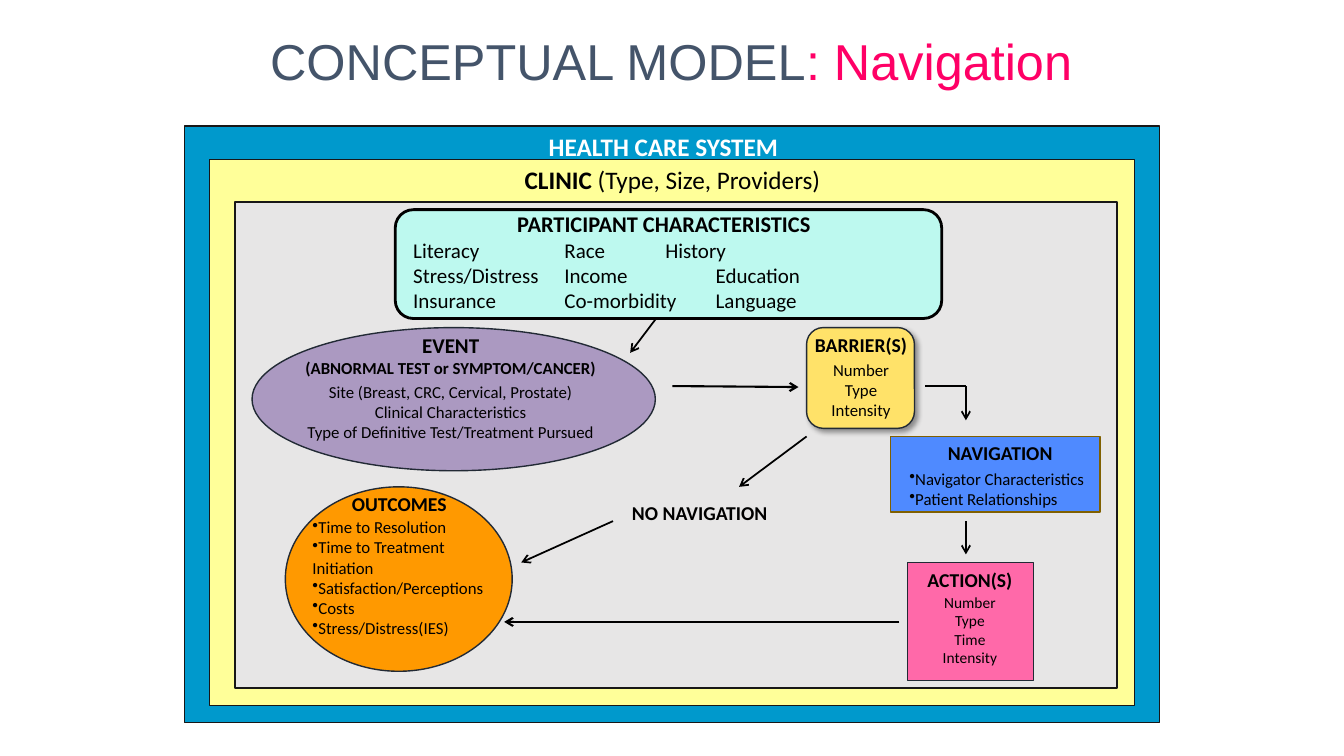
from dataclasses import dataclass

from lxml import etree
from pptx import Presentation
from pptx.dml.color import RGBColor
from pptx.enum.shapes import MSO_CONNECTOR as Connector, MSO_SHAPE as Shape
from pptx.enum.text import MSO_AUTO_SIZE as AutoSize, PP_ALIGN as Align
from pptx.oxml.ns import qn
from pptx.util import Inches, Pt

BLACK, WHITE, OUTLINE = "000000", "FFFFFF", "222A35"


@dataclass
class Line:
    """One paragraph: runs of (text, bold, colour) and their layout."""
    runs: list
    size: float
    align: Align = Align.CENTER
    gap: float = 0
    bullet: bool = False
    tabs: tuple = ()
    font: str = "Calibri"


def color(value):
    """Turn a hex string into a colour."""
    return RGBColor.from_string(value)


def bold(text, size, tint=BLACK, align=Align.CENTER):
    """Return a bold line."""
    return Line([(text, True, tint)], size, align)


def plain(texts, size, gap=0, **layout):
    """Return regular lines, with a gap above the first."""
    return [Line([(text, False, BLACK)], size, gap=0 if index else gap, **layout)
            for index, text in enumerate(texts)]


def add_panel(slide, kind, box, fill, line=OUTLINE, width=1):
    """Add a filled, outlined preset shape."""
    shape = slide.shapes.add_shape(kind, *map(Inches, box))
    shape.shadow.inherit = False
    shape.fill.solid()
    shape.fill.fore_color.rgb = color(fill)
    shape.line.color.rgb = color(line)
    shape.line.width = Pt(width)
    return shape


def add_drop_shadow(shape):
    """Give a shape a soft shadow to the lower right."""
    effects = shape._element.spPr.find(qn("a:effectLst"))
    shadow = etree.SubElement(effects, qn("a:outerShdw"), blurRad=str(Pt(4)),
                              dist=str(Pt(3)), dir="2700000", algn="tl", rotWithShape="0")
    tint = etree.SubElement(shadow, qn("a:srgbClr"), val=BLACK)
    etree.SubElement(tint, qn("a:alpha"), val="40000")


def format_line(paragraph, line):
    """Fill a paragraph from a line."""
    properties = paragraph._p.get_or_add_pPr()
    if line.bullet:
        properties.set("marL", "0")
        properties.set("indent", "0")
        etree.SubElement(properties, qn("a:buChar"), char="•")
    if line.tabs:
        stops = etree.SubElement(properties, qn("a:tabLst"))
        for stop in line.tabs:
            etree.SubElement(stops, qn("a:tab"), pos=str(Inches(stop)), algn="l")
    paragraph.alignment = line.align
    if line.gap:
        paragraph.space_before = Pt(line.gap)
    for text, is_bold, tint in line.runs:
        run = paragraph.add_run()
        run.text = text
        run.font.name = line.font
        run.font.size = Pt(line.size)
        run.font.bold = is_bold
        run.font.color.rgb = color(tint)


def add_text(slide, box, lines):
    """Add a wrapping text box."""
    text_frame = slide.shapes.add_textbox(*map(Inches, box)).text_frame
    text_frame.word_wrap = True
    text_frame.auto_size = AutoSize.SHAPE_TO_FIT_TEXT
    for index, line in enumerate(lines):
        paragraph = text_frame.add_paragraph() if index else text_frame.paragraphs[0]
        format_line(paragraph, line)


def add_link(slide, start, end, width=1.25, arrow=True):
    """Add a straight black line, with an arrowhead at its end if wanted."""
    connector = slide.shapes.add_connector(Connector.STRAIGHT, *map(Inches, start + end))
    connector.line.color.rgb = color(BLACK)
    connector.line.width = Pt(width)
    if arrow:
        etree.SubElement(connector.line._get_or_add_ln(), qn("a:tailEnd"), type="arrow")
    etree.SubElement(connector._element.spPr, qn("a:effectLst"))


def add_settings(slide):
    """Add the nested health care system, clinic and participant panels."""
    add_panel(slide, Shape.RECTANGLE, (1.83, 1.25, 9.67, 5.92), "0099CC", "181717")
    add_panel(slide, Shape.RECTANGLE, (2.08, 1.58, 9.17, 5.42), "FFFF99", "181717")
    add_panel(slide, Shape.RECTANGLE, (2.33, 2, 8.75, 4.83), "E7E6E6", "181717", 1.5)
    add_text(slide, (3.83, 1.25, 5.5, 0.4), [bold("HEALTH CARE SYSTEM", 18, WHITE)])
    add_text(slide, (3.92, 1.58, 5.5, 0.4), [
        Line([("CLINIC ", True, BLACK), ("(Type, Size, Providers)", False, BLACK)], 18)])
    add_panel(slide, Shape.ROUNDED_RECTANGLE, (3.92, 2.08, 5.42, 1.08), "BDF9EF", BLACK, 2)
    add_text(slide, (4, 2.04, 5.17, 1.12), [
        bold("PARTICIPANT CHARACTERISTICS", 16),
        *plain(["Literacy\tRace\tHistory"], 15, align=Align.LEFT, tabs=(1.5, 2.5)),
        *plain(["Stress/Distress\tIncome\tEducation", "Insurance\tCo-morbidity\tLanguage"],
               15, align=Align.LEFT, tabs=(1.5, 3))])


def add_steps(slide):
    """Add the steps from event to outcomes."""
    add_panel(slide, Shape.OVAL, (2.5, 3.25, 4, 1.42), "AB99C1")
    add_text(slide, (2.58, 3.25, 3.78, 1.19), [
        bold("EVENT", 15), bold("(ABNORMAL TEST or SYMPTOM/CANCER)", 12),
        *plain(["Site (Breast, CRC, Cervical, Prostate)", "Clinical Characteristics",
                "Type of Definitive Test/Treatment Pursued"], 12, 2.5)])

    barrier = add_panel(slide, Shape.ROUNDED_RECTANGLE, (8, 3.25, 1.07, 1), "FFE269")
    add_drop_shadow(barrier)
    add_text(slide, (7.83, 3.25, 1.42, 0.98), [
        bold("BARRIER(S)", 14), *plain(["Number", "Type", "Intensity"], 12, 2.5)])

    add_panel(slide, Shape.RECTANGLE, (8.83, 4.33, 2.08, 0.75), "4F8AFF", "806000")
    add_text(slide, (8.92, 4.33, 2, 0.77), [
        bold("NAVIGATION", 14),
        *plain(["Navigator Characteristics", "Patient Relationships"], 12, 2.5,
               align=Align.LEFT, bullet=True)])

    add_panel(slide, Shape.OVAL, (2.83, 4.83, 2.25, 1.83), "FF9900")
    add_text(slide, (3, 4.83, 1.92, 1.57), [
        bold("OUTCOMES", 14),
        *plain(["Time to Resolution", "Time to Treatment Initiation",
                "Satisfaction/Perceptions", "Costs", "Stress/Distress(IES)"], 12, 1.2,
               align=Align.LEFT, bullet=True)])

    add_text(slide, (6.17, 4.92, 2, 0.33), [bold("NO NAVIGATION", 14, align=Align.LEFT)])

    add_panel(slide, Shape.RECTANGLE, (9, 5.58, 1.25, 1.17), "FF69A9")
    add_text(slide, (9.08, 5.58, 1.08, 1.09), [
        bold("ACTION(S)", 14), *plain(["Number", "Type", "Time", "Intensity"], 11, 1.2)])


def add_flow(slide):
    """Add the arrows between the steps."""
    add_link(slide, (6.67, 3.83), (7.92, 3.84), 1.5)
    add_link(slide, (8.92, 6.17), (5, 6.17), 1.5)
    add_link(slide, (9.58, 3.83), (9.17, 3.83), 1, arrow=False)
    for start, end in [((8, 4.33), (7.33, 4.83)), ((6.08, 5.17), (5.17, 5.58)),
                       ((9.58, 5.17), (9.58, 5.5)), ((6.5, 3.17), (6.25, 3.5)),
                       ((9.58, 3.83), (9.58, 4.17))]:
        add_link(slide, start, end)


def main():
    """Build the conceptual model slide."""
    presentation = Presentation()
    presentation.slide_width, presentation.slide_height = Inches(13.33), Inches(7.5)
    slide = presentation.slides.add_slide(presentation.slide_layouts[6])
    add_text(slide, (2.58, 0.25, 8.75, 0.7), [
        Line([("CONCEPTUAL MODEL", False, "44546A"), (": Navigation", False, "FF0066")],
             36, Align.LEFT, font="Arial")])
    add_settings(slide)
    add_steps(slide)
    add_flow(slide)
    presentation.save("out.pptx")


if __name__ == "__main__":
    main()
